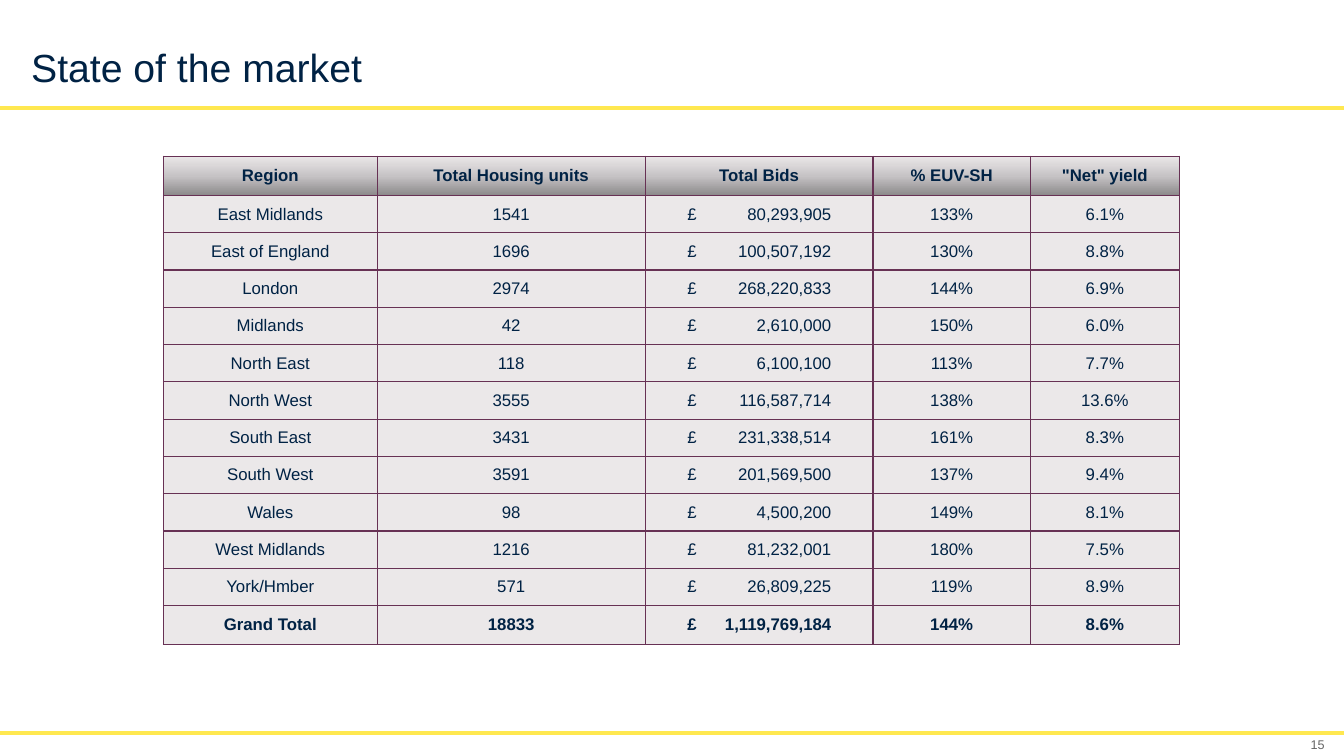
from dataclasses import dataclass
from lxml.etree import SubElement
from pptx import Presentation
from pptx.dml.color import RGBColor
from pptx.enum.shapes import MSO_CONNECTOR
from pptx.enum.text import MSO_ANCHOR, MSO_AUTO_SIZE, PP_ALIGN
from pptx.oxml import parse_xml
from pptx.oxml.ns import nsdecls, qn
from pptx.util import Pt

TITLE = "State of the market"
PAGE = "15"
HEADS = ("Region", "Total Housing units", "Total Bids", "% EUV-SH", '"Net" yield')
REGIONS = [
    ("East Midlands", "1541", "80,293,905", "133%", "6.1%"),
    ("East of England", "1696", "100,507,192", "130%", "8.8%"),
    ("London", "2974", "268,220,833", "144%", "6.9%"),
    ("Midlands", "42", "2,610,000", "150%", "6.0%"),
    ("North East", "118", "6,100,100", "113%", "7.7%"),
    ("North West", "3555", "116,587,714", "138%", "13.6%"),
    ("South East", "3431", "231,338,514", "161%", "8.3%"),
    ("South West", "3591", "201,569,500", "137%", "9.4%"),
    ("Wales", "98", "4,500,200", "149%", "8.1%"),
    ("West Midlands", "1216", "81,232,001", "180%", "7.5%"),
    ("York/Hmber", "571", "26,809,225", "119%", "8.9%"),
]
TOTAL = ("Grand Total", "18833", "1,119,769,184", "144%", "8.6%")


@dataclass(frozen=True)
class Theme:
    face: str = "Arial"
    ink: str = "002244"
    grey: str = "666666"
    rule: str = "FFE850"
    edge: str = "673154"
    body: str = "EBE8E9"
    shade: tuple = ((0, "8B898A"), (50, "C6C3C5"), (100, "EBE8E9"))
    title: int = 28
    cell: int = 12
    page: int = 9


LOOK = Theme()
WIDE, HIGH = 960, 540
LEFT, TOP = 116.8, 111.6
COLS = (152.64, 191.52, 162.72, 112.32, 106.56)
TALL, ROW = 28.08, 26.64
BIDS, INSET, STOP = 2, 30, 103


def apply(item, **values):
    for name, value in values.items():
        setattr(item, name, value)


def style(para, size, color, bold=False, align=PP_ALIGN.LEFT):
    para.alignment = align
    apply(para.font, name=LOOK.face, size=Pt(size), bold=bold)
    para.font.color.rgb = RGBColor.from_string(color)


def add_rule(slide, y):
    line = slide.shapes.add_connector(MSO_CONNECTOR.STRAIGHT, 0, Pt(y), Pt(WIDE), Pt(y))
    line.line.width = Pt(3)
    line.line.color.rgb = RGBColor.from_string(LOOK.rule)
    SubElement(line._element.spPr, qn("a:effectLst"))


def add_edges(cell):
    props = cell._tc.get_or_add_tcPr()
    for side in "LRTB":
        props.append(parse_xml(
            f'<a:ln{side} {nsdecls("a")} w="{Pt(1)}"><a:solidFill>'
            f'<a:srgbClr val="{LOOK.edge}"/></a:solidFill></a:ln{side}>'))


def add_shade(cell):
    stops = "".join(f'<a:gs pos="{pos * 1000}"><a:srgbClr val="{color}"/></a:gs>'
                    for pos, color in LOOK.shade)
    cell._tc.get_or_add_tcPr().append(parse_xml(
        f'<a:gradFill {nsdecls("a")}><a:gsLst>{stops}</a:gsLst>'
        f'<a:lin ang="{270 * 60000}" scaled="0"/></a:gradFill>'))


def add_stop(para):
    tabs = SubElement(para._p.get_or_add_pPr(), qn("a:tabLst"))
    SubElement(tabs, qn("a:tab"), pos=str(Pt(STOP)), algn="r")


def fill_cell(cell, text, head, bold, money):
    apply(cell, margin_left=Pt(INSET if money else 0), margin_right=0,
          margin_top=0, margin_bottom=0, vertical_anchor=MSO_ANCHOR.MIDDLE)
    add_edges(cell)
    if head:
        add_shade(cell)
    else:
        cell.fill.solid()
        cell.fill.fore_color.rgb = RGBColor.from_string(LOOK.body)
    cell.text = f"£\t{text}" if money else text
    para = cell.text_frame.paragraphs[0]
    if money:
        add_stop(para)
    align = PP_ALIGN.LEFT if money else PP_ALIGN.CENTER
    style(para, LOOK.cell, LOOK.ink, bold, align)


def add_grid(slide):
    rows = [HEADS, *REGIONS, TOTAL]
    last = len(rows) - 1
    highs = [TALL if i in (0, last) else ROW for i in range(len(rows))]
    grid = slide.shapes.add_table(len(rows), len(COLS), Pt(LEFT), Pt(TOP),
                                  Pt(sum(COLS)), Pt(sum(highs))).table
    apply(grid, first_row=False, horz_banding=False)
    for col, width in zip(grid.columns, COLS):
        col.width = Pt(width)
    for i, (row, high) in enumerate(zip(grid.rows, highs)):
        row.height = Pt(high)
        for j, text in enumerate(rows[i]):
            fill_cell(grid.cell(i, j), text, i == 0, i in (0, last), i > 0 and j == BIDS)


def add_title(slide):
    title = slide.shapes.title
    apply(title, left=Pt(15.12), top=Pt(32.4), width=Pt(881.28), height=Pt(36))
    frame = title.text_frame
    frame.text = TITLE
    apply(frame, vertical_anchor=MSO_ANCHOR.BOTTOM, word_wrap=True,
          auto_size=MSO_AUTO_SIZE.NONE)
    para = frame.paragraphs[0]
    para.line_spacing = 0.9
    style(para, LOOK.title, LOOK.ink)


def add_page(slide):
    box = slide.shapes.add_textbox(Pt(916.56), Pt(523.44), Pt(36.72), Pt(16.56))
    frame = box.text_frame
    frame.text = PAGE
    apply(frame, vertical_anchor=MSO_ANCHOR.MIDDLE, word_wrap=True)
    style(frame.paragraphs[0], LOOK.page, LOOK.grey, align=PP_ALIGN.RIGHT)


def main():
    deck = Presentation()
    apply(deck, slide_width=Pt(WIDE), slide_height=Pt(HIGH))
    slide = deck.slides.add_slide(deck.slide_layouts[5])
    for y in (77.04, 523.44):
        add_rule(slide, y)
    add_title(slide)
    add_page(slide)
    add_grid(slide)
    deck.save("out.pptx")


if __name__ == "__main__":
    main()
